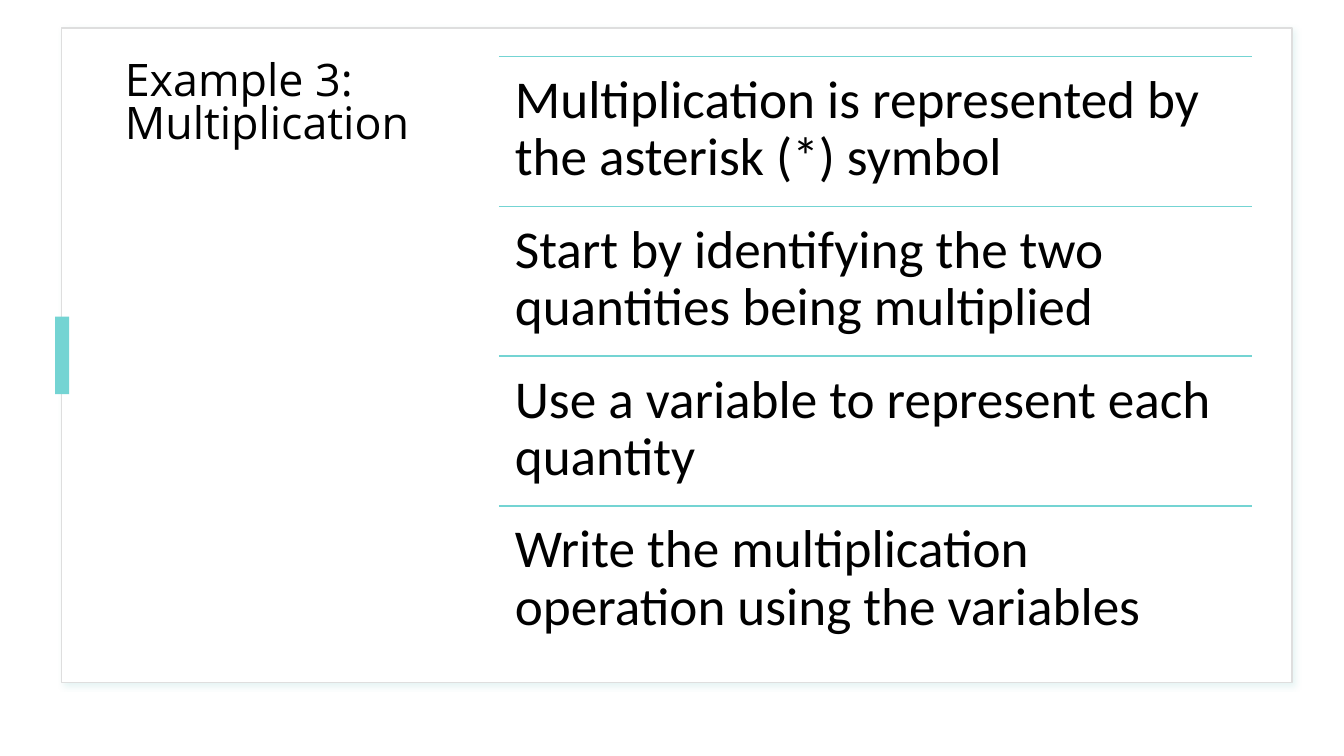
import pptx
import pptx.util
import pptx.dml.color
import pptx.enum.shapes
import pptx.enum.text
import pptx.oxml
import pptx.oxml.ns
from lxml import etree

Pt = pptx.util.Pt
RGBColor = pptx.dml.color.RGBColor
RECTANGLE = pptx.enum.shapes.MSO_SHAPE.RECTANGLE

WHITE = RGBColor(0xFF, 0xFF, 0xFF)
BLACK = RGBColor(0, 0, 0)
BORDER = RGBColor(0xDE, 0xDE, 0xDE)
TEAL = RGBColor(0x74, 0xD4, 0xD3)

STEPS = [
    "Multiplication is represented by the asterisk (*) symbol",
    "Start by identifying the two quantities being multiplied",
    "Use a variable to represent each quantity",
    "Write the multiplication operation using the variables",
]
STEP_LEFT, STEP_TOP, STEP_WIDTH, STEP_HEIGHT = 356.4, 40.2, 537.8, 107.1

CARD_SHADOW = (
    f'<a:effectLst {pptx.oxml.ns.nsdecls("a")}>'
    '<a:outerShdw blurRad="50800" dist="38100" dir="2700000" algn="tl" rotWithShape="0">'
    '<a:srgbClr val="3DAAA8"><a:alpha val="12000"/></a:srgbClr>'
    '</a:outerShdw></a:effectLst>'
)


def add_text(text, left, top, width, height, font, size, spacing, inset_x, inset_y):
    tf = s.shapes.add_textbox(Pt(left), Pt(top), Pt(width), Pt(height)).text_frame
    tf.word_wrap = True
    tf.vertical_anchor = pptx.enum.text.MSO_ANCHOR.TOP
    tf.margin_left = tf.margin_right = Pt(inset_x)
    tf.margin_top = tf.margin_bottom = Pt(inset_y)
    p = tf.paragraphs[0]
    p.text = text
    p.line_spacing = spacing
    p.font.name = font
    p.font.size = Pt(size)
    p.font.color.rgb = BLACK


prs = pptx.Presentation()
prs.slide_width, prs.slide_height = Pt(960), Pt(540)
s = prs.slides.add_slide(prs.slide_layouts[6])

card = s.shapes.add_shape(RECTANGLE, Pt(44), Pt(20), Pt(879), Pt(467.5))
card.fill.solid()
card.fill.fore_color.rgb = WHITE
card.line.color.rgb = BORDER
card.line.width = Pt(1)
card._element.spPr.append(pptx.oxml.parse_xml(CARD_SHADOW))

add_text("Example 3: Multiplication", 82.1, 41, 235.4, 428,
         "Open Sans", 32, 0.8, 7.2, 3.6)

accent = s.shapes.add_shape(RECTANGLE, Pt(39.4), Pt(226.2), Pt(10), Pt(55.4))
accent.shadow.inherit = False
accent.fill.solid()
accent.fill.fore_color.rgb = TEAL
accent.line.fill.background()

for i, step in enumerate(STEPS):
    top = STEP_TOP + i * STEP_HEIGHT
    rule = s.shapes.add_connector(
        pptx.enum.shapes.MSO_CONNECTOR.STRAIGHT,
        Pt(STEP_LEFT), Pt(top), Pt(STEP_LEFT + STEP_WIDTH), Pt(top))
    rule.line.color.rgb = TEAL
    rule.line.width = Pt(1)
    etree.SubElement(rule._element.spPr, pptx.oxml.ns.qn("a:effectLst"))
    add_text(step, STEP_LEFT, top, STEP_WIDTH, STEP_HEIGHT,
             "Calibri", 38, 0.9, 11.4, 11.4)

prs.save("out.pptx")
